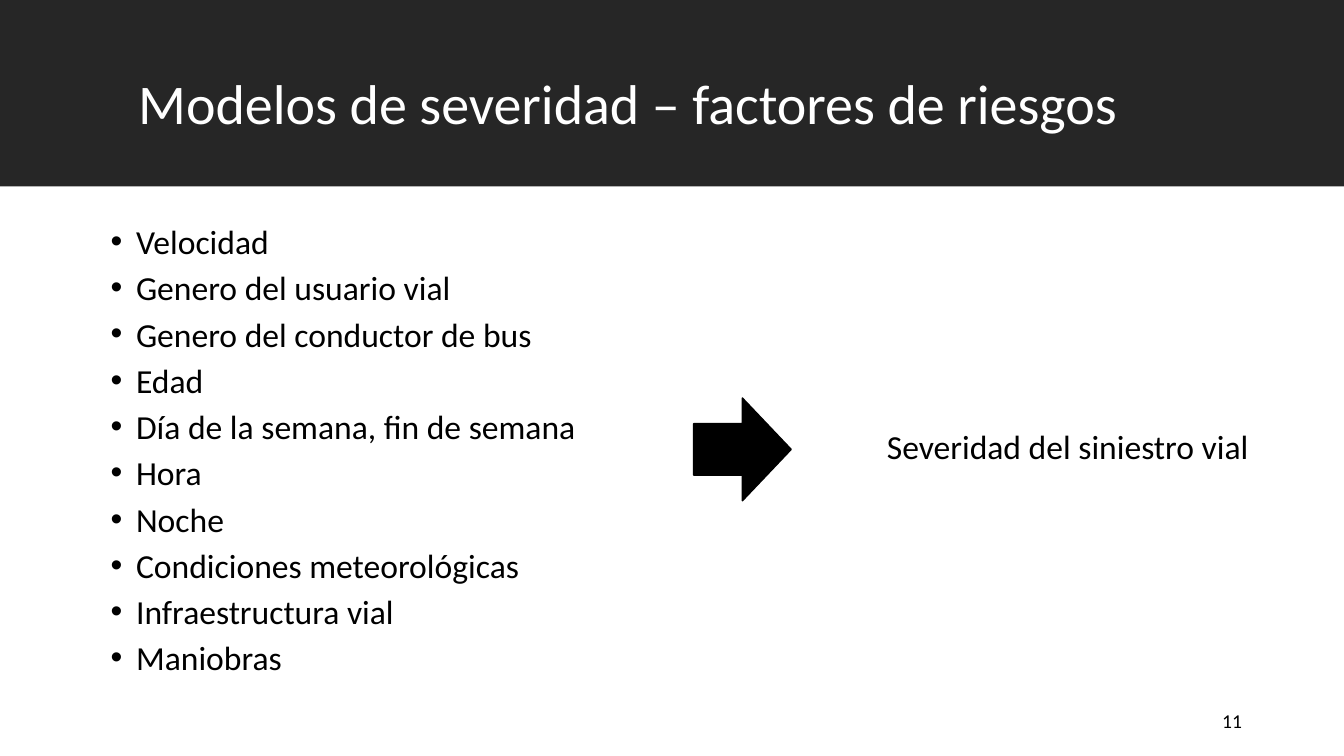
from lxml.etree import SubElement
from pptx import Presentation
from pptx.dml.color import RGBColor
from pptx.enum.shapes import MSO_SHAPE as Preset
from pptx.enum.text import MSO_ANCHOR as Anchor, PP_ALIGN as Align
from pptx.oxml.ns import qn
from pptx.util import Cm, Pt

CHARCOAL = RGBColor(0x26, 0x26, 0x26)
WHITE = RGBColor(0xFF, 0xFF, 0xFF)
BLACK = RGBColor(0, 0, 0)

RISK_FACTORS = [
    "Velocidad",
    "Genero del usuario vial",
    "Genero del conductor de bus",
    "Edad",
    "Día de la semana, fin de semana",
    "Hora",
    "Noche",
    "Condiciones meteorológicas",
    "Infraestructura vial",
    "Maniobras",
]


def apply(target, values):
    for name, value in values.items():
        setattr(target, name, value)


class SlideBuilder:
    font_name = "Calibri"
    indent = Cm(0.64)
    gap = Pt(10)

    def __init__(self, slide):
        self.slide = slide

    def shape(self, preset, box, fill, outlined=False):
        shape = self.slide.shapes.add_shape(preset, *map(Cm, box))
        shape.shadow.inherit = False
        shape.fill.solid()
        shape.fill.fore_color.rgb = fill
        if outlined:
            shape.line.color.rgb = fill
            shape.line.width = Pt(1)
        else:
            shape.line.fill.background()
        return shape

    def title(self, text, box, size, color):
        title = self.slide.shapes.title
        apply(title, dict(zip(("left", "top", "width", "height"), map(Cm, box))))
        self.fill_text(title.text_frame, [text], size, color, spacing=0.9)

    def text(self, lines, box, size, **style):
        frame = self.slide.shapes.add_textbox(*map(Cm, box)).text_frame
        self.fill_text(frame, lines, size, BLACK, **style)

    def fill_text(self, frame, lines, size, color, spacing=1.0, bullets=False,
                  align=Align.LEFT, anchor=Anchor.TOP):
        apply(frame, {"word_wrap": True, "vertical_anchor": anchor})
        for index, line in enumerate(lines):
            paragraph = frame.add_paragraph() if index else frame.paragraphs[0]
            paragraph.text = line
            apply(paragraph, {
                "alignment": align,
                "line_spacing": spacing,
                "space_before": self.gap if index else Pt(0),
            })
            if bullets:
                self.bullet(paragraph)
            apply(paragraph.runs[0].font, {"name": self.font_name, "size": Pt(size)})
            paragraph.runs[0].font.color.rgb = color

    def bullet(self, paragraph):
        properties = paragraph._p.get_or_add_pPr()
        properties.set("marL", str(self.indent))
        properties.set("indent", str(-self.indent))
        SubElement(properties, qn("a:buFont"), typeface="Arial")
        SubElement(properties, qn("a:buChar"), char="•")


def main():
    deck = Presentation()
    apply(deck, {"slide_width": Cm(33.87), "slide_height": Cm(19.05)})
    builder = SlideBuilder(deck.slides.add_slide(deck.slide_layouts[5]))

    band = builder.shape(Preset.RECTANGLE, (0, 0, 33.87, 4.7), CHARCOAL)
    builder.slide.shapes.title._element.addprevious(band._element)
    builder.title("Modelos de severidad – factores de riesgos",
                  (3.23, 1.78, 27.46, 2.49), 40, WHITE)
    builder.text(RISK_FACTORS, (2.54, 5.64, 14.38, 12.09), 24,
                 spacing=0.8, bullets=True)
    builder.shape(Preset.RIGHT_ARROW, (17.48, 10.03, 2.46, 2.59), BLACK, outlined=True)
    builder.text(["Severidad del siniestro vial"], (22.1, 10.72, 10.77, 1.6), 24,
                 spacing=0.9)
    builder.text(["11"], (23.93, 17.65, 7.62, 1.02), 14,
                 align=Align.RIGHT, anchor=Anchor.MIDDLE)

    deck.save("out.pptx")


if __name__ == "__main__":
    main()
